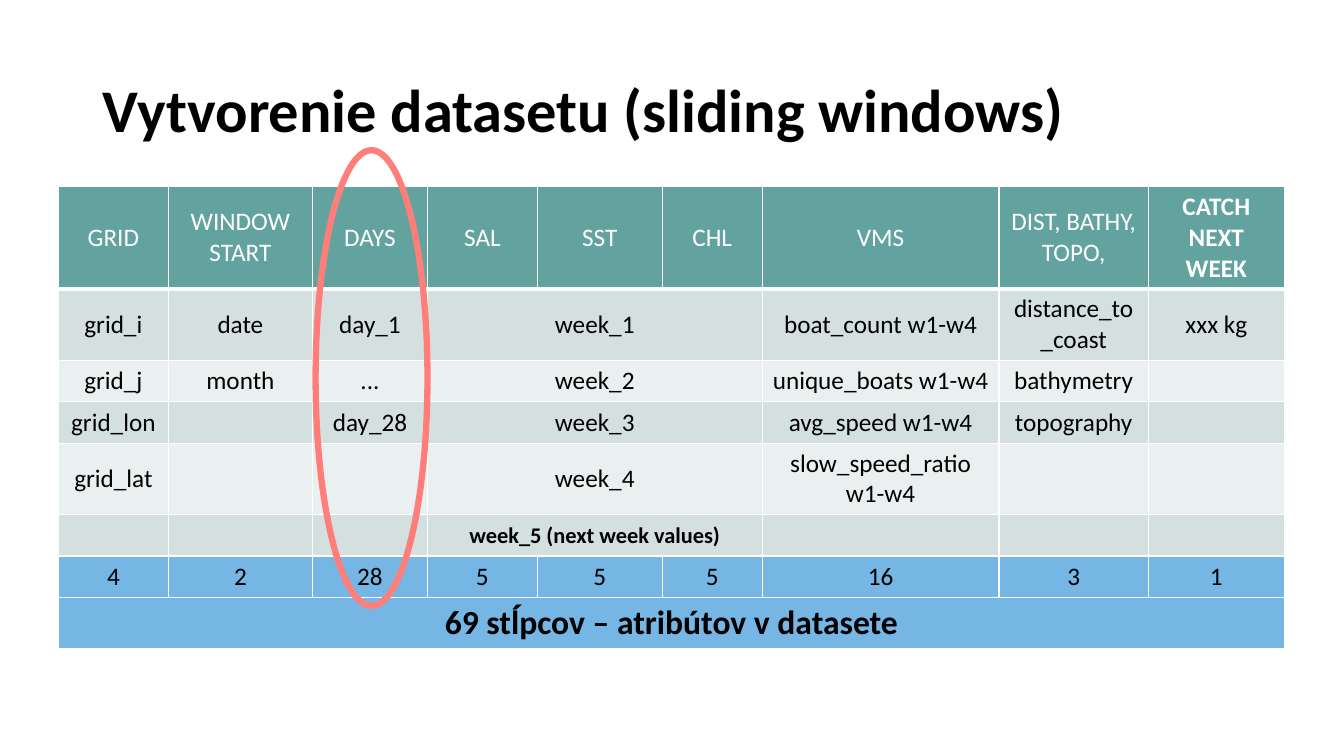
from dataclasses import dataclass

from lxml import etree
from pptx import Presentation
from pptx.dml.color import RGBColor
from pptx.enum.shapes import MSO_SHAPE
from pptx.enum.text import MSO_ANCHOR, MSO_AUTO_SIZE, PP_ALIGN
from pptx.oxml.ns import qn
from pptx.util import Inches, Pt

OVAL = MSO_SHAPE.OVAL
MID = MSO_ANCHOR.MIDDLE
LEFT = PP_ALIGN.LEFT
CENTER = PP_ALIGN.CENTER
NO_FIT = MSO_AUTO_SIZE.NONE

TITLE = "Vytvorenie datasetu (sliding windows)"
HEAD = ["GRID", "WINDOW START", "DAYS", "SAL", "SST", "CHL", "VMS",
        "DIST, BATHY, TOPO,", "CATCH NEXT WEEK"]
BODY = [
    ["grid_i", "date", "day_1", "week_1", "", "", "boat_count w1-w4",
     "distance_to_coast", "xxx kg"],
    ["grid_j", "month", "...", "week_2", "", "", "unique_boats w1-w4",
     "bathymetry", ""],
    ["grid_lon", "", "day_28", "week_3", "", "", "avg_speed w1-w4",
     "topography", ""],
    ["grid_lat", "", "", "week_4", "", "", "slow_speed_ratio w1-w4", "", ""],
    ["", "", "", "week_5 (next week values)", "", "", "", "", ""],
]
COUNTS = ["4", "2", "28", "5", "5", "5", "16", "3", "1"]
TOTAL = "69 stĺpcov – atribútov v datasete"
WIDTHS = [1.09, 1.43, 1.14, 1.09, 1.24, 0.99, 2.35, 1.48, 1.35]
HEAD_H, ROW_H = 0.56, 0.41
WEEK = (3, 5)


@dataclass(frozen=True)
class Theme:
    font: str = "Calibri"
    ink: str = "000000"
    white: str = "FFFFFF"
    head: str = "62A39F"
    bands: tuple = ("D3E0DF", "EAF0F0")
    sum: str = "75B6E5"
    ring: str = "FF7E79"
    title: float = 43.2
    text: float = 18
    note: float = 16
    total: float = 24
    thin: float = 1
    thick: float = 3
    ring_w: float = 4.5


THEME = Theme()


def write(para, text, size, color, bold=False, align=CENTER):
    para.alignment = align
    run = para.add_run()
    run.text = text
    font = run.font
    font.name, font.size, font.bold = THEME.font, Pt(size), bold
    font.color.rgb = RGBColor.from_string(color)


def edge(cell, side, width):
    line = etree.SubElement(cell._tc.get_or_add_tcPr(), qn("a:ln" + side),
                            w=str(Pt(width)))
    fill = etree.SubElement(line, qn("a:solidFill"))
    etree.SubElement(fill, qn("a:srgbClr"), val=THEME.white)


def style(row, col, last):
    if row == 0:
        return THEME.head, THEME.white, THEME.text, col == len(HEAD) - 1
    if row == last:
        return THEME.sum, THEME.ink, THEME.total, True
    if row == last - 1:
        return THEME.sum, THEME.ink, THEME.text, False
    band = THEME.bands[(row - 1) % 2]
    if row == len(BODY) and col == WEEK[0]:
        return band, THEME.ink, THEME.note, True
    return band, THEME.ink, THEME.text, False


def add_title(slide):
    box = slide.shapes.title
    box.left, box.top = Inches(0.92), Inches(0.4)
    box.width, box.height = Inches(11.5), Inches(1.45)
    frame = box.text_frame
    frame.word_wrap, frame.auto_size = True, NO_FIT
    frame.vertical_anchor = MID
    para = frame.paragraphs[0]
    para.line_spacing = 0.9
    write(para, TITLE, THEME.title, THEME.ink, True, LEFT)


def add_grid(slide):
    rows = [HEAD, *BODY, COUNTS, [TOTAL] + [""] * (len(HEAD) - 1)]
    last = len(rows) - 1
    grid = slide.shapes.add_table(
        len(rows), len(HEAD), Inches(0.58), Inches(1.85),
        Inches(sum(WIDTHS)), Inches(HEAD_H + last * ROW_H)).table
    for col, width in zip(grid.columns, WIDTHS):
        col.width = Inches(width)
    for r, texts in enumerate(rows):
        grid.rows[r].height = Inches(ROW_H if r else HEAD_H)
        for c, text in enumerate(texts):
            cell = grid.cell(r, c)
            fill, ink, size, bold = style(r, c, last)
            for side in "LRTB":
                heavy = (r, side) in ((0, "B"), (1, "T"))
                edge(cell, side, THEME.thick if heavy else THEME.thin)
            cell.fill.solid()
            cell.fill.fore_color.rgb = RGBColor.from_string(fill)
            cell.vertical_anchor = MID
            if text:
                write(cell.text_frame.paragraphs[0], text, size, ink, bold)
    for r in range(1, len(BODY) + 1):
        grid.cell(r, WEEK[0]).merge(grid.cell(r, WEEK[1]))
    grid.cell(last, 0).merge(grid.cell(last, len(HEAD) - 1))


def add_ring(slide):
    ring = slide.shapes.add_shape(OVAL, Inches(3.13), Inches(1.49),
                                  Inches(1.11), Inches(4.52))
    ring.shadow.inherit = False
    ring.fill.background()
    ring.line.color.rgb = RGBColor.from_string(THEME.ring)
    ring.line.width = Pt(THEME.ring_w)


def main():
    deck = Presentation()
    deck.slide_width, deck.slide_height = Inches(13.33), Inches(7.5)
    slide = deck.slides.add_slide(deck.slide_layouts[5])
    add_title(slide)
    add_grid(slide)
    add_ring(slide)
    deck.save("out.pptx")


if __name__ == "__main__":
    main()
